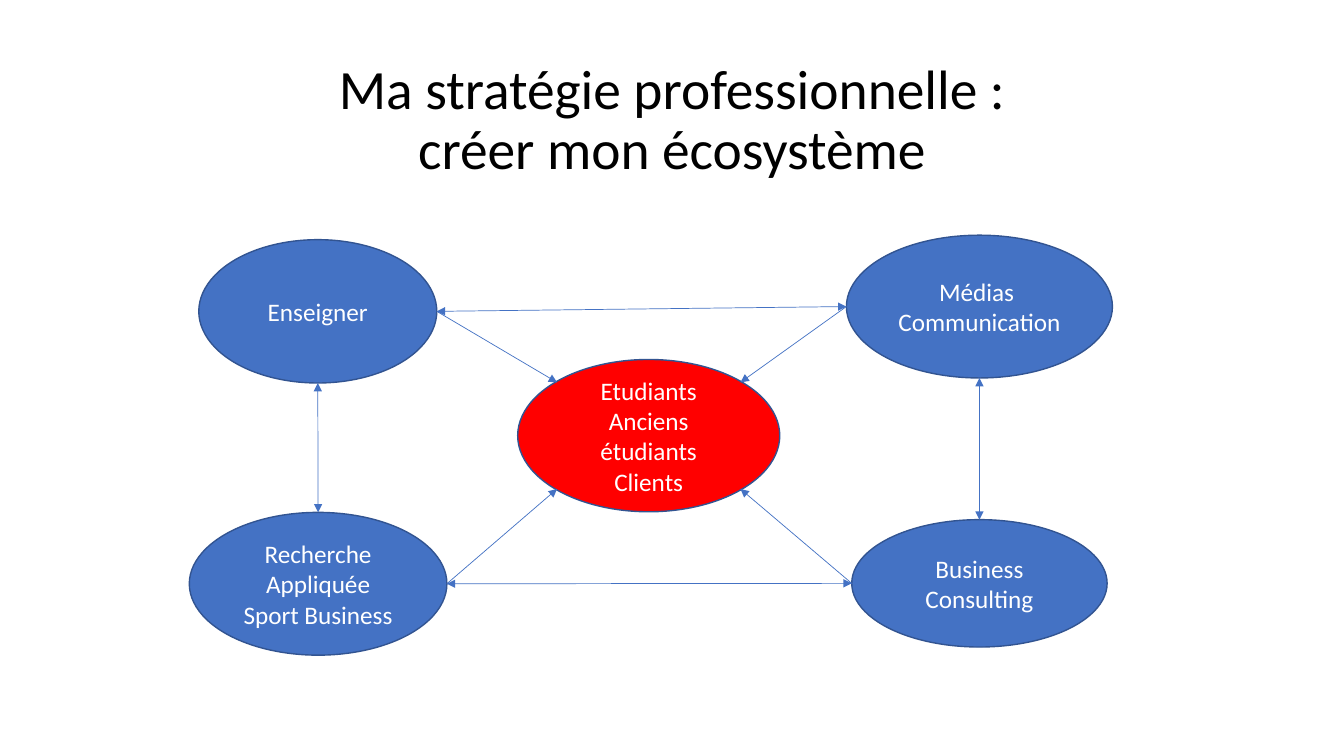
from lxml import etree
from pptx import Presentation
from pptx.dml.color import RGBColor
from pptx.enum import shapes, text
from pptx.oxml import ns
from pptx.util import Pt

BLACK = RGBColor(0x00, 0x00, 0x00)
WHITE = RGBColor(0xFF, 0xFF, 0xFF)
BLUE = RGBColor(0x44, 0x72, 0xC4)
DARK_BLUE = RGBColor(0x32, 0x54, 0x91)
RED = RGBColor(0xFF, 0x00, 0x00)
FONT = "Calibri"

# Connection sites of an ellipse: index, then place as a share of width and height
NEAR, FAR = 0.15, 0.85
SITES = {
    "top": (0, 0.5, 0), "top left": (1, NEAR, NEAR),
    "left": (2, 0, 0.5), "bottom left": (3, NEAR, FAR),
    "bottom": (4, 0.5, 1), "bottom right": (5, FAR, FAR),
    "right": (6, 1, 0.5), "top right": (7, FAR, NEAR),
}


def add_run(paragraph, words, size, color):
    run = paragraph.add_run()
    run.text = words
    run.font.name = FONT
    run.font.size = Pt(size)
    run.font.color.rgb = color


def site_point(shape, site):
    """Return the site's index and its x and y on the slide."""
    index, across, down = SITES[site]
    return (index, int(shape.left + shape.width * across),
            int(shape.top + shape.height * down))


presentation = Presentation()
presentation.slide_width = Pt(960)
presentation.slide_height = Pt(540)
slide = presentation.slides.add_slide(presentation.slide_layouts[5])

title = slide.shapes.title
title.left, title.top, title.width, title.height = Pt(120), Pt(28), Pt(729), Pt(118)
title.text_frame.word_wrap = True
title.text_frame.auto_size = text.MSO_AUTO_SIZE.NONE
title.text_frame.vertical_anchor = text.MSO_ANCHOR.MIDDLE
paragraph = title.text_frame.paragraphs[0]
paragraph.alignment = text.PP_ALIGN.CENTER
paragraph.line_spacing = 0.9
add_run(paragraph, "Ma stratégie professionnelle : ", 39.6, BLACK)
paragraph.add_line_break()
add_run(paragraph, "créer mon écosystème ", 39.6, BLACK)

# Name: left, top, width, height, fill, paragraphs
activities = {
    "teaching": (142, 171.2, 170, 102.4, BLUE, ["Enseigner"]),
    "research": (135.2, 366, 184, 102, BLUE, ["Recherche Appliquée", "Sport Business"]),
    "consulting": (608.4, 371.2, 182.4, 91, BLUE, ["Business", "Consulting"]),
    "media": (604.6, 168, 190, 102, BLUE, ["Médias ", "Communication"]),
    "audience": (369.8, 256.8, 187.2, 108.8, RED,
                 ["Etudiants", "Anciens étudiants", "Clients"]),
}
ellipses = {}
for name, (left, top, width, height, fill, lines) in activities.items():
    ellipse = slide.shapes.add_shape(
        shapes.MSO_SHAPE.OVAL, Pt(left), Pt(top), Pt(width), Pt(height))
    ellipse.shadow.inherit = False
    ellipse.fill.solid()
    ellipse.fill.fore_color.rgb = fill
    ellipse.line.color.rgb = DARK_BLUE
    ellipse.line.width = Pt(1)
    frame = ellipse.text_frame
    frame.word_wrap = True
    frame.vertical_anchor = text.MSO_ANCHOR.MIDDLE
    for number, words in enumerate(lines):
        paragraph = frame.add_paragraph() if number else frame.paragraphs[0]
        paragraph.alignment = text.PP_ALIGN.CENTER
        add_run(paragraph, words, 18, WHITE)
    ellipses[name] = ellipse

# Start and its site, end and its site, arrowheads
ONE_WAY, BOTH_WAYS = ["tailEnd"], ["headEnd", "tailEnd"]
links = [
    ("teaching", "right", "audience", "top left", ONE_WAY),
    ("media", "left", "audience", "top right", ONE_WAY),
    ("research", "right", "audience", "bottom left", ONE_WAY),
    ("consulting", "left", "audience", "bottom right", ONE_WAY),
    ("teaching", "right", "media", "left", BOTH_WAYS),
    ("teaching", "bottom", "research", "top", BOTH_WAYS),
    ("research", "right", "consulting", "left", BOTH_WAYS),
    ("media", "bottom", "consulting", "top", BOTH_WAYS),
]
for start, start_site, end, end_site, arrowheads in links:
    start_index, start_x, start_y = site_point(ellipses[start], start_site)
    end_index, end_x, end_y = site_point(ellipses[end], end_site)
    connector = slide.shapes.add_connector(
        shapes.MSO_CONNECTOR.STRAIGHT, start_x, start_y, end_x, end_y)
    connector.line.color.rgb = BLUE
    connector.line.width = Pt(0.5)
    # begin_connect covers four sites only, so the ellipse's eight are joined in XML
    joints = connector._element.nvCxnSpPr.cNvCxnSpPr
    for tag, name, index in [("a:stCxn", start, start_index), ("a:endCxn", end, end_index)]:
        etree.SubElement(joints, ns.qn(tag), id=str(ellipses[name].shape_id), idx=str(index))
    properties = connector._element.spPr
    outline = properties.find(ns.qn("a:ln"))
    for arrowhead in arrowheads:
        etree.SubElement(outline, ns.qn("a:" + arrowhead), type="triangle")
    etree.SubElement(properties, ns.qn("a:effectLst"))

presentation.save("out.pptx")
